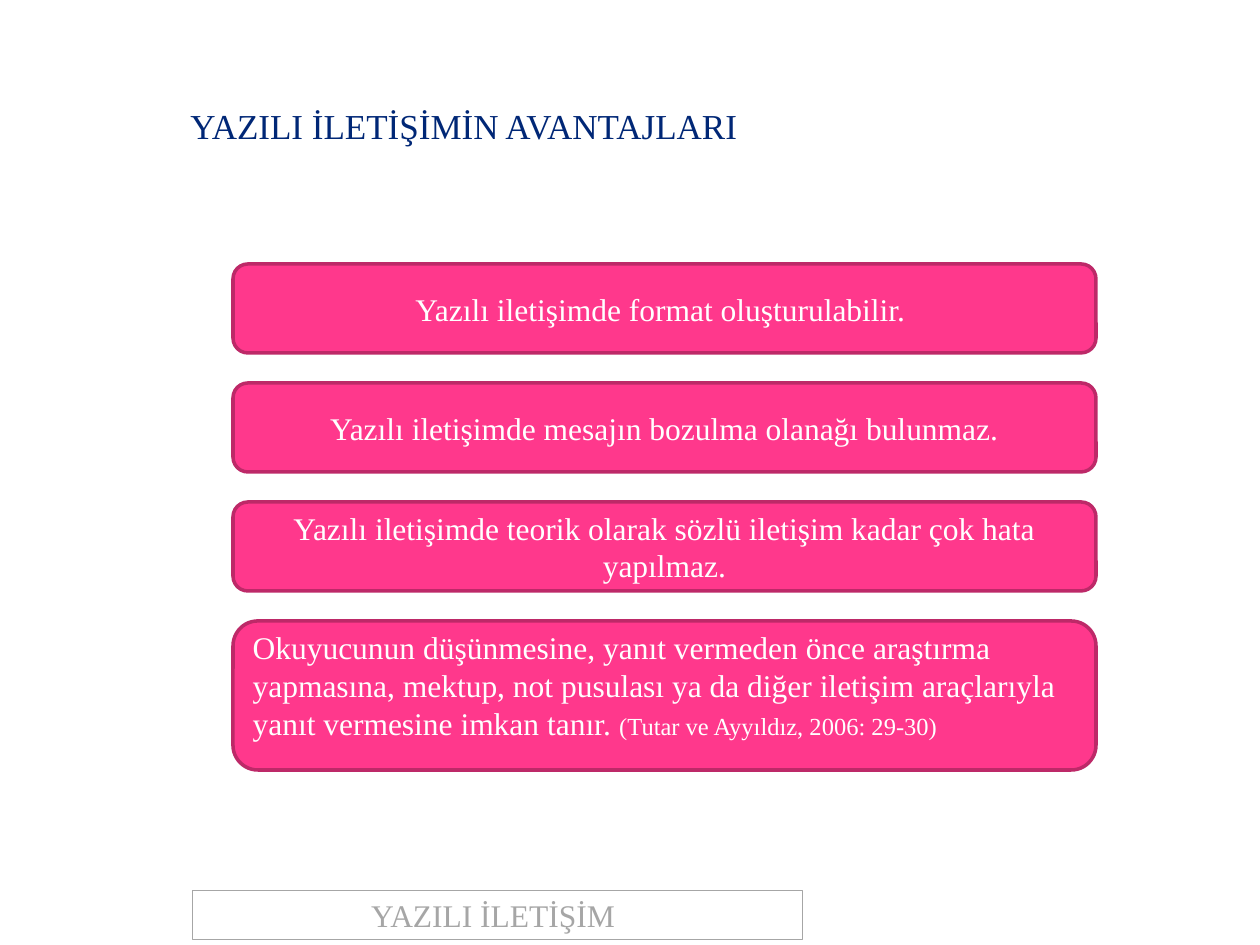
from pptx import Presentation, util as u
from pptx.dml.color import RGBColor
from pptx.enum import shapes, text

THEME = {
    "font": "Times New Roman",
    "navy": "002776", "pink": "FF388C", "plum": "BD2968",
    "white": "FFFFFF", "grey": "A6A6A6",
    "title": 20, "body": 18, "citation": 14,
    "card_line": 2, "footer_line": 0.25,
}
SLIDE = (1260, 945)
TITLE = "YAZILI İLETİŞİMİN AVANTAJLARI"
FOOTER = "YAZILI İLETİŞİM "
ADVANTAGES = [
    "Yazılı iletişimde format oluşturulabilir. ",
    "Yazılı iletişimde mesajın bozulma olanağı bulunmaz.",
    "Yazılı iletişimde teorik olarak sözlü iletişim kadar çok hata yapılmaz.",
]
CONCLUSION = ("Okuyucunun düşünmesine, yanıt vermeden önce araştırma yapmasına, "
              "mektup, not pusulası ya da diğer iletişim araçlarıyla yanıt "
              "vermesine imkan tanır. ")
CITATION = "(Tutar ve Ayyıldız, 2006: 29-30)"

TITLE_BOX = (178, 98, 669, 55)
FOOTER_BOX = (192, 890, 610, 49)
CARD_LEFT, CARD_TOP, CARD_WIDTH, CARD_HEIGHT = 233, 264, 863, 89
CARD_STEP, CONCLUSION_HEIGHT = 119, 149

CENTERED = {"vertical_anchor": text.MSO_ANCHOR.MIDDLE}
FROM_TOP = {"vertical_anchor": text.MSO_ANCHOR.TOP, "margin_top": 0}


def px(length):
    return round(length * u.Inches(1) / 126)


def color(name):
    return RGBColor.from_string(THEME[name])


def write(frame, runs, ink, align, layout):
    for name, value in {"word_wrap": True, **layout}.items():
        setattr(frame, name, value)
    line = frame.paragraphs[0]
    line.alignment = align
    for words, size in runs:
        run = line.add_run()
        run.text = words
        for name, value in {"name": THEME["font"], "size": u.Pt(THEME[size])}.items():
            setattr(run.font, name, value)
        run.font.color.rgb = color(ink)


def add_panel(slide, preset, box, fill, outline, weight):
    panel = slide.shapes.add_shape(preset, *map(px, box))
    panel.shadow.inherit = False
    if fill:
        panel.fill.solid()
        panel.fill.fore_color.rgb = color(fill)
    else:
        panel.fill.background()
    panel.line.color.rgb = color(outline)
    panel.line.width = u.Pt(THEME[weight])
    return panel.text_frame


def main():
    deck = Presentation()
    deck.slide_width, deck.slide_height = map(px, SLIDE)
    slide = deck.slides.add_slide(deck.slide_layouts[6])
    left, center = text.PP_ALIGN.LEFT, text.PP_ALIGN.CENTER

    title = slide.shapes.add_textbox(*map(px, TITLE_BOX)).text_frame
    write(title, [(TITLE, "title")], "navy", left, {})

    cards = [([(words, "body")], CARD_HEIGHT, center, CENTERED) for words in ADVANTAGES]
    cards.append(([(CONCLUSION, "body"), (CITATION, "citation")],
                  CONCLUSION_HEIGHT, left, FROM_TOP))
    for row, (runs, height, align, layout) in enumerate(cards):
        box = (CARD_LEFT, CARD_TOP + row * CARD_STEP, CARD_WIDTH, height)
        card = add_panel(slide, shapes.MSO_SHAPE.ROUNDED_RECTANGLE, box,
                         "pink", "plum", "card_line")
        write(card, runs, "white", align, layout)

    footer = add_panel(slide, shapes.MSO_SHAPE.RECTANGLE, FOOTER_BOX,
                       None, "grey", "footer_line")
    write(footer, [(FOOTER, "body")], "grey", center, CENTERED)
    deck.save("out.pptx")


if __name__ == "__main__":
    main()
